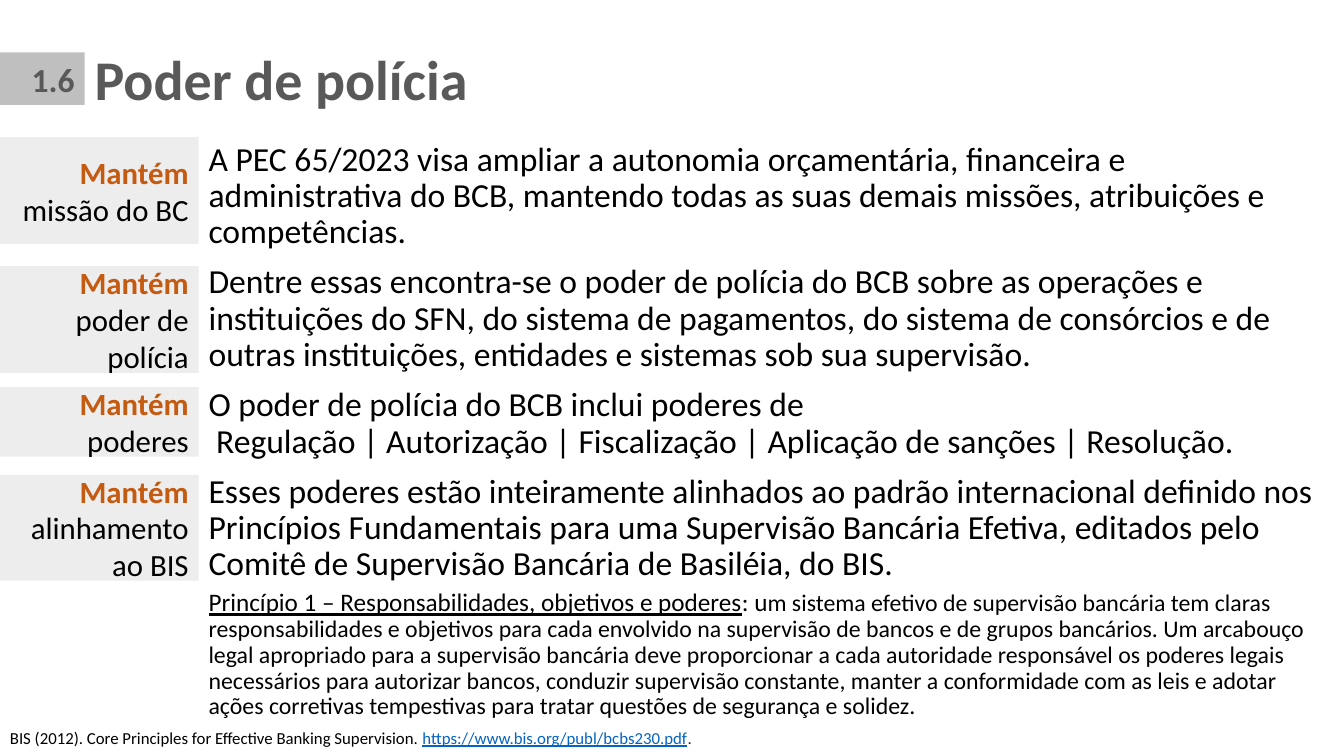
import pptx
import pptx.util
import pptx.dml.color
import pptx.enum.shapes
import pptx.enum.text

Inches = pptx.util.Inches
Pt = pptx.util.Pt
RGBColor = pptx.dml.color.RGBColor
PP_ALIGN = pptx.enum.text.PP_ALIGN
MSO_ANCHOR = pptx.enum.text.MSO_ANCHOR

BLACK = RGBColor(0x00, 0x00, 0x00)
DARK_GRAY = RGBColor(0x59, 0x59, 0x59)
MID_GRAY = RGBColor(0xBF, 0xBF, 0xBF)
LIGHT_GRAY = RGBColor(0xED, 0xED, 0xED)
ORANGE = RGBColor(0xC5, 0x5A, 0x11)
LINK_BLUE = RGBColor(0x05, 0x63, 0xC1)
STOP_GRAY = RGBColor(0x2C, 0x28, 0x25)

LABEL_WIDTH = 1.97

# Label text, top and height of each tag in the left column
LABELS = [
    ("missão do BC", 1.36, 1.06),
    ("poder de polícia", 2.64, 1.06),
    ("poderes", 3.84, 0.69),
    ("alinhamento ao BIS", 4.71, 1.05),
]

STATEMENTS = [
    "A PEC 65/2023 visa ampliar a autonomia orçamentária, financeira e administrativa do BCB, "
    "mantendo todas as suas demais missões, atribuições e competências.",
    "Dentre essas encontra-se o poder de polícia do BCB sobre as operações e instituições do SFN, "
    "do sistema de pagamentos, do sistema de consórcios e de outras instituições, entidades e "
    "sistemas sob sua supervisão.",
    "O poder de polícia do BCB inclui poderes de\v Regulação | Autorização | Fiscalização | "
    "Aplicação de sanções | Resolução.",
    "Esses poderes estão inteiramente alinhados ao padrão internacional definido nos Princípios "
    "Fundamentais para uma Supervisão Bancária Efetiva, editados pelo Comitê de Supervisão "
    "Bancária de Basiléia, do BIS.",
]

PRINCIPLE_TITLE = "Princípio 1 – Responsabilidades, objetivos e poderes"
PRINCIPLE_TEXT = (
    "m sistema efetivo de supervisão bancária tem claras responsabilidades e objetivos para cada "
    "envolvido na supervisão de bancos e de grupos bancários. Um arcabouço legal apropriado para a "
    "supervisão bancária deve proporcionar a cada autoridade responsável os poderes legais "
    "necessários para autorizar bancos, conduzir supervisão constante, manter a conformidade com "
    "as leis e adotar ações corretivas tempestivas para tratar questões de segurança e solidez."
)


class SlideBuilder:
    font_name = "Calibri"
    line_spacing = 0.9

    def __init__(self, slide):
        self.slide = slide

    def fill_text(self, frame, paragraphs, **layout):
        """Fill a frame with paragraphs, each a list of (text, size, colour, font extras)."""
        frame.word_wrap = True
        for index, runs in enumerate(paragraphs):
            paragraph = frame.paragraphs[0] if index == 0 else frame.add_paragraph()
            for name, value in layout.items():
                setattr(paragraph, name, value)
            if index == 0:
                paragraph.space_before = Pt(0)
            for text, size, color, extras in runs:
                # A vertical tab marks a line break within the paragraph
                for part_index, part in enumerate(text.split("\v")):
                    if part_index:
                        paragraph.add_line_break()
                    run = paragraph.add_run()
                    run.text = part
                    formats = {"name": self.font_name, "size": Pt(size), **extras}
                    for name, value in formats.items():
                        setattr(run.font, name, value)
                    run.font.color.rgb = color

    def text(self, box, paragraphs, anchor=MSO_ANCHOR.TOP, space_before=0):
        frame = self.slide.shapes.add_textbox(*map(Inches, box)).text_frame
        frame.vertical_anchor = anchor
        self.fill_text(frame, paragraphs, line_spacing=self.line_spacing,
                       space_before=Pt(space_before))
        return frame

    def tag(self, box, fill, runs):
        """Draw a borderless band with right-aligned text."""
        band = self.slide.shapes.add_shape(
            pptx.enum.shapes.MSO_SHAPE.RECTANGLE, *map(Inches, box))
        band.shadow.inherit = False
        band.fill.solid()
        band.fill.fore_color.rgb = fill
        band.line.fill.background()
        band.text_frame.vertical_anchor = MSO_ANCHOR.MIDDLE
        self.fill_text(band.text_frame, [runs], alignment=PP_ALIGN.RIGHT)


def main():
    deck = pptx.Presentation()
    deck.slide_width = Inches(13.33)
    deck.slide_height = Inches(7.5)
    builder = SlideBuilder(deck.slides.add_slide(deck.slide_layouts[6]))

    bold, underlined = {"bold": True}, {"underline": True}

    builder.text((0.84, 0.36, 12.49, 0.81),
                 [[("Poder de polícia", 40, DARK_GRAY, bold)]], MSO_ANCHOR.BOTTOM)
    builder.tag((0, 0.52, 0.84, 0.52), MID_GRAY, [("1.6", 24, DARK_GRAY, bold)])

    principle = [
        (PRINCIPLE_TITLE, 18, BLACK, underlined),
        (": u", 18, BLACK, {}),
        (PRINCIPLE_TEXT, 17, BLACK, {}),
    ]
    statements = [[(statement, 24, BLACK, {})] for statement in STATEMENTS]
    body = builder.text((LABEL_WIDTH, 1.36, 11.22, 5.78), statements + [principle],
                        space_before=10)
    body.paragraphs[-1].space_before = Pt(5)

    for label, top, height in LABELS:
        builder.tag((0, top, LABEL_WIDTH, height), LIGHT_GRAY,
                    [("Mantém ", 22, ORANGE, bold), (label, 22, BLACK, {})])

    builder.text((0, 7.19, 13.33, 0.3), [[
        ("BIS (2012). Core Principles for Effective Banking Supervision. ", 12, BLACK, {}),
        ("https://www.bis.org/publ/bcbs230.pdf", 12, LINK_BLUE, underlined),
        (".", 12, STOP_GRAY, {}),
    ]])

    deck.save("out.pptx")


if __name__ == "__main__":
    main()
